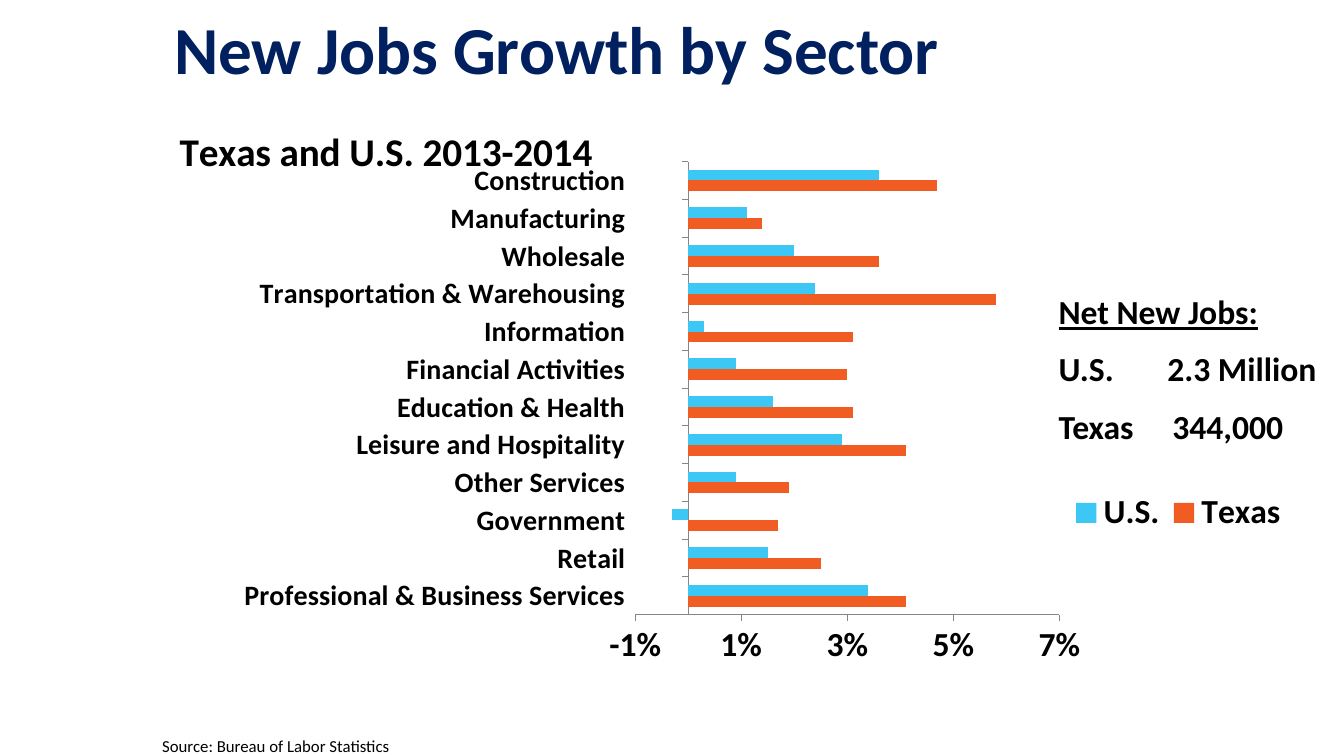
from lxml import etree
from pptx import Presentation
from pptx import util as u
from pptx.chart import data as cd
from pptx.dml.color import RGBColor
from pptx.enum import chart as ce, text
from pptx.oxml import ns

FONT = "Calibri"
COLORS = {"title": "002060", "text": "000000", "axis": "868686",
          "Texas": "F15C22", "U.S.": "3DC7F4"}

# Sector, Texas growth, U.S. growth (bottom bar first)
SECTORS = [
    ("Professional & Business Services", 0.041, 0.034),
    ("Retail", 0.025, 0.015),
    ("Government", 0.017, -0.003),
    ("Other Services", 0.019, 0.009),
    ("Leisure and Hospitality", 0.041, 0.029),
    ("Education & Health", 0.031, 0.016),
    ("Financial Activities", 0.03, 0.009),
    ("Information", 0.031, 0.003),
    ("Transportation & Warehousing", 0.058, 0.024),
    ("Wholesale", 0.036, 0.02),
    ("Manufacturing", 0.014, 0.011),
    ("Construction", 0.047, 0.036),
]

# Net new jobs: text and tab stop in inches
JOBS = [("U.S.\t2.3 Million", 1.08), ("Texas\t344,000", 1.13)]


def rgb(name):
    return RGBColor.from_string(COLORS[name])


def put(obj, **vals):
    for key, val in vals.items():
        setattr(obj, key, val)


def style(font, size, color="text", **vals):
    put(font, name=FONT, size=u.Pt(size), **vals)
    font.color.rgb = rgb(color)


def add_box(slide, left, top, width, height, **vals):
    box = slide.shapes.add_textbox(*map(u.Inches, (left, top, width, height)))
    put(box.text_frame, word_wrap=True, **vals)
    return box.text_frame


def add_line(para, words, size, color="text", **vals):
    run = para.add_run()
    run.text = words
    style(run.font, size, color, **vals)


def add_tab(para, pos):
    tabs = etree.SubElement(para._p.get_or_add_pPr(), ns.qn("a:tabLst"))
    etree.SubElement(tabs, ns.qn("a:tab"), pos=str(u.Inches(pos)), algn="l")


def place(part, index, inner=False, **vals):
    """Give a chart part a manual layout in fractions of the chart."""
    for old in part.findall(ns.qn("c:layout")):
        part.remove(old)
    layout = etree.Element(ns.qn("c:layout"))
    manual = etree.SubElement(layout, ns.qn("c:manualLayout"))
    tags = {"layoutTarget": "inner"} if inner else {}
    tags.update(xMode="edge", yMode="edge", **vals)
    for tag, val in tags.items():
        etree.SubElement(manual, ns.qn("c:" + tag), val=str(val))
    part.insert(index, layout)


def style_axis(axis, size, **vals):
    put(axis, has_major_gridlines=False, major_tick_mark=ce.XL_TICK_MARK.OUTSIDE,
        minor_tick_mark=ce.XL_TICK_MARK.NONE,
        tick_label_position=ce.XL_TICK_LABEL_POSITION.LOW, **vals)
    style(axis.tick_labels.font, size, bold=True)
    axis.format.line.color.rgb = rgb("axis")
    axis.format.line.width = u.Pt(0.75)


def add_bars(slide):
    names, texas, nation = zip(*SECTORS)
    data = cd.CategoryChartData(number_format="0.0%")
    data.categories = names
    data.add_series("Texas", texas)
    data.add_series("U.S.", nation)
    area = map(u.Inches, (1.63, 1.05, 11.56, 5.77))
    chart = slide.shapes.add_chart(
        ce.XL_CHART_TYPE.BAR_CLUSTERED, *area, data).chart
    style(chart.font, 18)

    # Bars
    plot = chart.plots[0]
    put(plot, gap_width=150, overlap=0, vary_by_categories=False)
    for series in plot.series:
        series.invert_if_negative = False
        series.format.fill.solid()
        series.format.fill.fore_color.rgb = rgb(series.name)

    # Axes
    style_axis(chart.category_axis, 20)
    style_axis(chart.value_axis, 24, minimum_scale=-0.01,
               maximum_scale=0.07, major_unit=0.02)
    put(chart.value_axis.tick_labels, number_format="0%",
        number_format_is_linked=False)

    # Title and legend
    add_line(chart.chart_title.text_frame.paragraphs[0],
             "Texas and U.S. 2013-2014", 28, bold=True)
    chart.has_legend = True
    put(chart.legend, position=ce.XL_LEGEND_POSITION.RIGHT,
        include_in_layout=False)
    style(chart.legend.font, 24, bold=True)

    # Places within the chart
    root = chart._chartSpace.chart
    place(root.find(ns.qn("c:title")), 1, x=0.007, y=0.02)
    place(root.plotArea, 0, inner=True, x=0.404, y=0.096, w=0.364, h=0.779)
    place(root.find(ns.qn("c:legend")), 1, x=0.77, y=0.65, w=0.2, h=0.1)


def add_jobs(slide):
    frame = add_box(slide, 10.4, 2.84, 2.79, 1.65)
    add_line(frame.paragraphs[0], "Net New Jobs:", 24, bold=True, underline=True)
    for words, stop in JOBS:
        para = frame.add_paragraph()
        para.space_before = u.Pt(12)
        add_tab(para, stop)
        add_line(para, words, 24, bold=True)


def main():
    deck = Presentation()
    put(deck, slide_width=u.Inches(13.33), slide_height=u.Inches(7.5))
    slide = deck.slides.add_slide(deck.slide_layouts[6])

    # Heading
    head = add_box(slide, 1.63, 0, 11.7, 1.05,
                   vertical_anchor=text.MSO_ANCHOR.MIDDLE)
    head.paragraphs[0].line_spacing = 0.9
    add_line(head.paragraphs[0], "New Jobs Growth by Sector", 48, "title", bold=True)

    add_bars(slide)

    # Source and totals
    note = add_box(slide, 1.51, 7.25, 7.54, 0.5)
    add_line(note.paragraphs[0], "Source: Bureau of Labor Statistics", 12)
    add_jobs(slide)

    deck.save("out.pptx")


if __name__ == "__main__":
    main()
